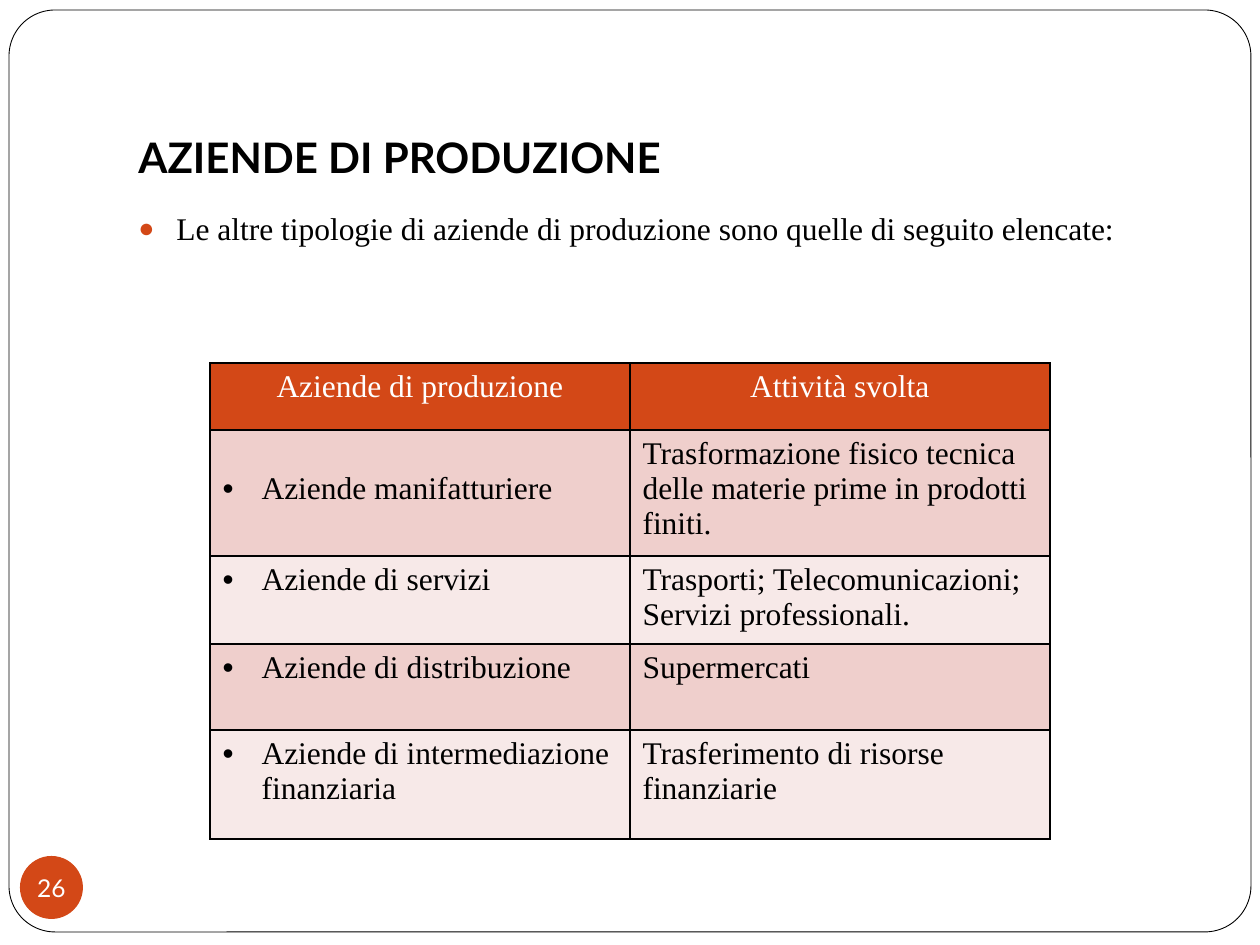
from lxml import etree
from pptx import Presentation
from pptx.dml.color import RGBColor
from pptx.enum.shapes import MSO_SHAPE
from pptx.enum.text import MSO_ANCHOR, PP_ALIGN
from pptx.oxml.ns import qn
from pptx.util import Pt

ROUND, OVAL = MSO_SHAPE.ROUNDED_RECTANGLE, MSO_SHAPE.OVAL
TOP, MIDDLE, BOTTOM = MSO_ANCHOR.TOP, MSO_ANCHOR.MIDDLE, MSO_ANCHOR.BOTTOM
LEFT, CENTER = PP_ALIGN.LEFT, PP_ALIGN.CENTER
SCALE = 914400 // 126  # EMU per px

# Content
TITLE = "AZIENDE DI PRODUZIONE"
INTRO = "Le altre tipologie di aziende di produzione sono quelle di seguito elencate:"
HEAD = ("Aziende di produzione", "Attività svolta")
ROWS = [
    ("Aziende manifatturiere",
     "Trasformazione fisico tecnica delle materie prime in prodotti finiti."),
    ("Aziende di servizi",
     "Trasporti; Telecomunicazioni; Servizi professionali."),
    ("Aziende di distribuzione", "Supermercati"),
    ("Aziende di intermediazione finanziaria",
     "Trasferimento di risorse finanziarie"),
]
NUMBER = "26"

SANS, SERIF = "Lato", "Times New Roman"
BLACK, WHITE, ORANGE = "000000", "FFFFFF", "D34817"
BANDS = ("EFCFCC", "F7E9E8")
HEIGHTS = (67, 121, 74, 86, 109)
COL = 420
LINE = 35  # height of one text line


def px(n):
    return n * SCALE


def color(code):
    return RGBColor.from_string(code)


def style(frame, font, size, tint, bold=False, align=LEFT):
    para = frame.paragraphs[0]
    para.alignment = align
    for run in para.runs:
        run.font.name, run.font.size = font, Pt(size)
        run.font.bold = bold
        run.font.color.rgb = color(tint)


def bullet(para, char, indent, tint=None, size=None):
    props = para._p.get_or_add_pPr()
    props.set("marL", str(px(indent)))
    props.set("indent", str(-px(indent)))
    if tint:
        node = etree.SubElement(props, qn("a:buClr"))
        etree.SubElement(node, qn("a:srgbClr"), val=tint)
    if size:
        etree.SubElement(props, qn("a:buSzPct"), val=str(size * 1000))
    etree.SubElement(props, qn("a:buFont"), typeface="Arial")
    etree.SubElement(props, qn("a:buChar"), char=char)


def border(cell):
    props = cell._tc.get_or_add_tcPr()
    for i, side in enumerate(("lnL", "lnR", "lnT", "lnB")):
        line = etree.Element(qn("a:" + side), w=str(Pt(1)))
        fill = etree.SubElement(line, qn("a:solidFill"))
        etree.SubElement(fill, qn("a:srgbClr"), val=BLACK)
        props.insert(i, line)


def add_shape(slide, kind, box, fill):
    shape = slide.shapes.add_shape(kind, *map(px, box))
    shape.shadow.inherit = False
    shape.fill.solid()
    shape.fill.fore_color.rgb = color(fill)
    return shape


def add_text(slide, box, text, anchor):
    frame = slide.shapes.add_textbox(*map(px, box)).text_frame
    frame.word_wrap = True
    frame.vertical_anchor = anchor
    frame.text = text
    return frame


def add_table(slide):
    rows = [HEAD] + ROWS
    table = slide.shapes.add_table(
        len(rows), len(HEAD), px(210), px(363),
        px(COL * len(HEAD)), px(sum(HEIGHTS))).table
    for col in table.columns:
        col.width = px(COL)
    for r, texts in enumerate(rows):
        table.rows[r].height = px(HEIGHTS[r])
        for c, text in enumerate(texts):
            cell = table.cell(r, c)
            cell.text = text
            cell.vertical_anchor = TOP
            cell.fill.solid()
            cell.fill.fore_color.rgb = color(BANDS[(r - 1) % 2] if r else ORANGE)
            border(cell)
            style(cell.text_frame, SERIF, 18, BLACK if r else WHITE,
                  align=LEFT if r else CENTER)
            if r and c == 0:
                bullet(cell.text_frame.paragraphs[0], "•", 39)
    # The first entry starts one line lower
    table.cell(1, 0).margin_top = px(6 + LINE)


def main():
    deck = Presentation()
    deck.slide_width, deck.slide_height = px(1260), px(945)
    slide = deck.slides.add_slide(deck.slide_layouts[6])

    # Frame
    frame = add_shape(slide, ROUND, (9, 10, 1242, 922), WHITE)
    frame.adjustments[0] = 0.05
    frame.line.color.rgb = color(BLACK)
    frame.line.width = Pt(0.5)

    # Title and intro
    title = add_text(slide, (126, 38, 1071, 157), TITLE, BOTTOM)
    title.margin_bottom = px(13)
    style(title, SANS, 24, BLACK, bold=True)
    intro = add_text(slide, (126, 199, 1071, 630), INTRO, TOP)
    intro.margin_top = px(10)
    style(intro, SERIF, 18, BLACK)
    bullet(intro.paragraphs[0], "●", 38, ORANGE, 85)

    add_table(slide)

    # Page number
    badge = add_shape(slide, OVAL, (20, 856, 63, 63), ORANGE)
    badge.line.fill.background()
    text = badge.text_frame
    text.margin_left = text.margin_right = 0
    text.margin_top = text.margin_bottom = 0
    text.word_wrap = False
    text.vertical_anchor = MIDDLE
    text.text = NUMBER
    style(text, SANS, 14, WHITE, align=CENTER)

    deck.save("out.pptx")


if __name__ == "__main__":
    main()
